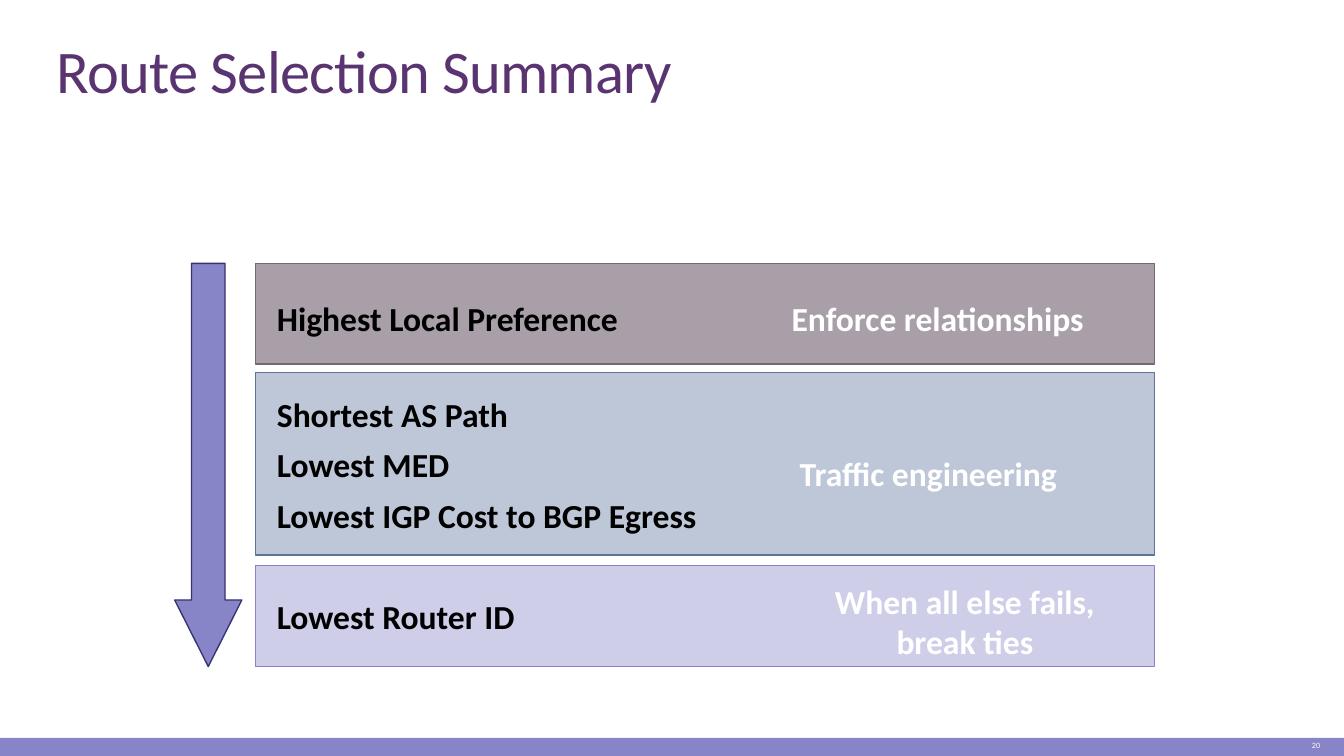
from pptx import Presentation
from pptx.dml.color import RGBColor
from pptx.enum.shapes import MSO_SHAPE as SHAPE
from pptx.enum.text import MSO_ANCHOR as ANCHOR, MSO_AUTO_SIZE as AUTO, PP_ALIGN as ALIGN
from pptx.util import Inches, Pt

PLUM = RGBColor(0x5A, 0x34, 0x71)
VIOLET = RGBColor(0x87, 0x84, 0xC7)
INDIGO = RGBColor(0x37, 0x34, 0x72)
LILAC = RGBColor(0xCF, 0xCE, 0xE9)
MAUVE = RGBColor(0xA8, 0x9F, 0xA8)
DARK_MAUVE = RGBColor(0x73, 0x67, 0x73)
STEEL = RGBColor(0xBD, 0xC7, 0xD7)
DARK_STEEL = RGBColor(0x5D, 0x73, 0x9A)
BLACK = RGBColor(0, 0, 0)
WHITE = RGBColor(0xFF, 0xFF, 0xFF)

# Widescreen, 16:9
prs = Presentation()
prs.slide_width, prs.slide_height = Inches(10), Inches(10 * 9 / 16)
s = prs.slides.add_slide(prs.slide_layouts[5])


def add_box(kind, x, y, w, h, fill, line=None):
    sp = s.shapes.add_shape(kind, Inches(x), Inches(y), Inches(w), Inches(h))
    sp.shadow.inherit = False
    sp.fill.solid()
    sp.fill.fore_color.rgb = fill
    if line is None:
        sp.line.fill.background()
    else:
        sp.line.color.rgb = line
        sp.line.width = Pt(0.75)
    return sp


def add_label(text, x, y, w, h, color, size=18, bold=True, align=ALIGN.LEFT):
    sp = s.shapes.add_textbox(Inches(x), Inches(y), Inches(w), Inches(h))
    tf = sp.text_frame
    tf.text = text
    tf.margin_left = tf.margin_right = Inches(0.07)
    tf.margin_top = tf.margin_bottom = Inches(0.04)
    for p in tf.paragraphs:
        p.alignment = align
        for r in p.runs:
            r.font.name = "Calibri"
            r.font.size = Pt(size)
            r.font.bold = bold
            r.font.color.rgb = color
    return tf


# Title
title = s.shapes.title
title.left, title.top = Inches(0.32), Inches(0.24)
title.width, title.height = Inches(9.48), Inches(0.6)
tf = title.text_frame
tf.text = "Route Selection Summary"
tf.vertical_anchor = ANCHOR.BOTTOM
tf.auto_size = AUTO.NONE
p = tf.paragraphs[0]
p.alignment = ALIGN.LEFT
p.line_spacing = 0.85
r = p.runs[0]
r.font.name = "Calibri"
r.font.size = Pt(32.4)
r.font.color.rgb = PLUM
r.font._element.set("spc", "-40")

# Footer bar and slide number
add_box(SHAPE.RECTANGLE, 0, 5.49, 10, 0.14, VIOLET)
tf = add_label("20", 8.84, 5.46, 1.08, 0.17, WHITE, 4.3, False, ALIGN.RIGHT)
tf.word_wrap = True
tf.vertical_anchor = ANCHOR.MIDDLE
tf.margin_right = Inches(0.1)

# Bands, one for each stage of the selection
for y, h, fill, line in [
    (1.96, 0.75, MAUVE, DARK_MAUVE),
    (2.77, 1.36, STEEL, DARK_STEEL),
    (4.21, 0.75, LILAC, VIOLET),
]:
    add_box(SHAPE.RECTANGLE, 1.9, y, 6.69, h, fill, line)

# Criteria on the left
for text, y, w in [
    ("Highest Local Preference", 2.18, 2.71),
    ("Shortest AS Path", 2.89, 1.89),
    ("Lowest MED", 3.26, 1.45),
    ("Lowest IGP Cost to BGP Egress", 3.64, 4.06),
    ("Lowest Router ID", 4.39, 1.94),
]:
    add_label(text, 1.99, y, w, 0.38, BLACK).word_wrap = False

# Purposes on the right
for text, x, y, w, h, align in [
    ("Enforce relationships", 5.82, 2.18, 2.34, 0.38, ALIGN.LEFT),
    ("Traffic engineering", 5.88, 3.33, 2.15, 0.38, ALIGN.LEFT),
    ("When all else fails,\nbreak ties", 6.13, 4.28, 2.1, 0.68, ALIGN.CENTER),
]:
    add_label(text, x, y, w, h, WHITE, align=align).word_wrap = False

# Order of the steps
arrow = add_box(SHAPE.DOWN_ARROW, 1.3, 1.96, 0.5, 3, VIOLET, INDIGO)
arrow.adjustments[0] = 0.5
arrow.adjustments[1] = 0.99

prs.save("out.pptx")
